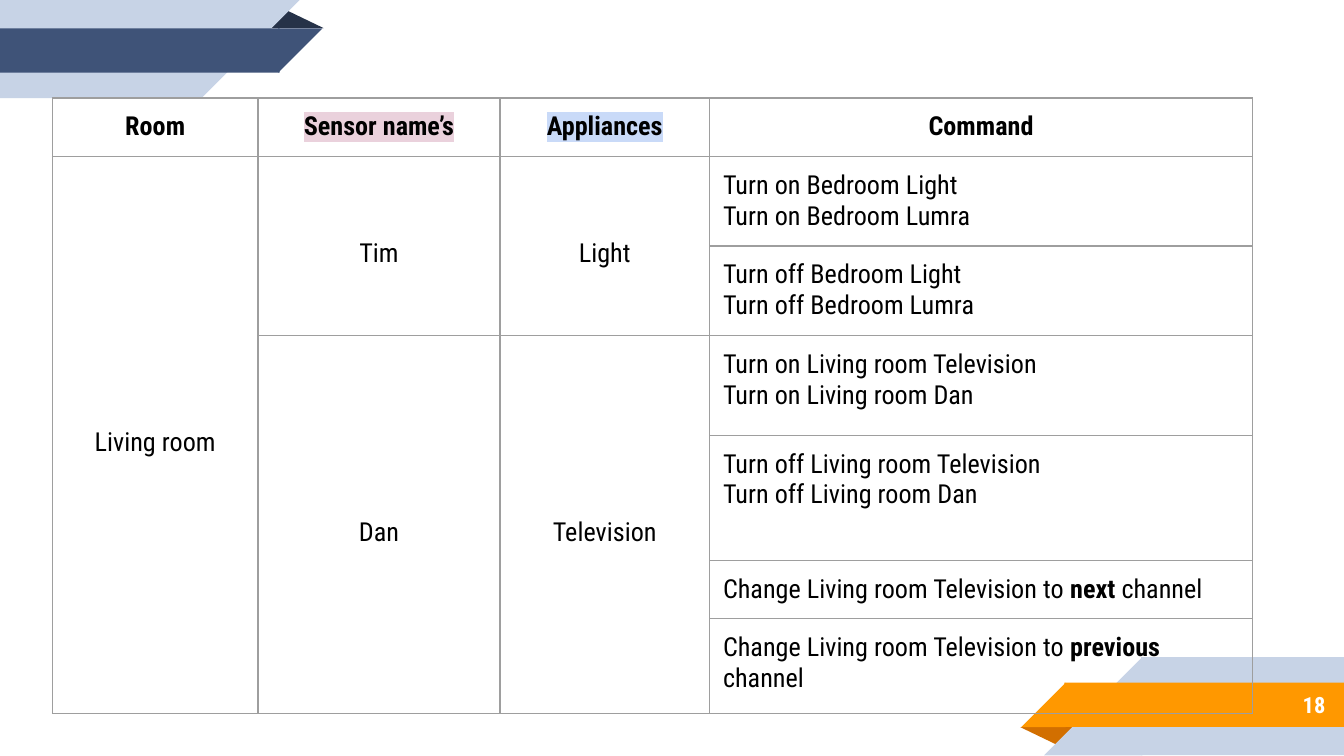
from collections import namedtuple

from lxml import etree
from pptx import Presentation
from pptx import util as u
from pptx.dml.color import RGBColor
from pptx.enum import shapes, text
from pptx.oxml import ns

Box = namedtuple("Box", "left top width height")

WHITE = RGBColor(0xFF, 0xFF, 0xFF)
BLACK = RGBColor(0x00, 0x00, 0x00)
PALE = RGBColor(0xC7, 0xD3, 0xE6)
NAVY = RGBColor(0x3F, 0x53, 0x78)
DARK_NAVY = RGBColor(0x26, 0x32, 0x48)
ORANGE = RGBColor(0xFF, 0x98, 0x00)
DARK_ORANGE = RGBColor(0xD2, 0x6F, 0x00)
PINK = RGBColor(0xEA, 0xD1, 0xDC)
SKY = RGBColor(0xC9, 0xDA, 0xF8)
GREY = RGBColor(0x9E, 0x9E, 0x9E)

FONT = "Roboto Condensed"
BODY = {"name": FONT, "size": u.Pt(14), "bold": False}
STRONG = {**BODY, "bold": True}
NUMBER = {"name": FONT, "size": u.Pt(12), "bold": True}
CENTRED = {"alignment": text.PP_ALIGN.CENTER}
SPACED = {**CENTRED, "line_spacing": 1.5}
MARGINS = {f"margin_{side}": u.Inches(0.1)
           for side in ("left", "right", "top", "bottom")}

COLUMNS = [1.53, 1.8, 1.56, 4.04]
ROWS = [0.38, 0.59, 0.59, 0.74, 0.93, 0.38, 0.71]
HEADINGS = [("Room", None), ("Sensor name’s", PINK),
            ("Appliances", SKY), ("Command", None)]
GROUPS = [(1, 0, 6, "Living room"),
          (1, 1, 2, "Tim"), (1, 2, 2, "Light"),
          (3, 1, 4, "Dan"), (3, 2, 4, "Television")]
COMMANDS = [
    [["Turn on Bedroom Light"], ["Turn on Bedroom Lumra"]],
    [["Turn off Bedroom Light"], ["Turn off Bedroom Lumra"]],
    [["Turn on Living room Television"], ["Turn on Living room Dan"]],
    [["Turn off Living room Television"], ["Turn off Living room Dan"]],
    [["Change Living room Television to ", "next", " channel"]],
    [["Change Living room Television to", " previous", " channel"]],
]


def apply(target, values):
    for name, value in values.items():
        setattr(target, name, value)


def add_span(para, words, style, color=BLACK, highlight=None):
    span = para.add_run()
    span.text = words
    apply(span.font, style)
    span.font.color.rgb = color
    if highlight is not None:
        mark = etree.Element(ns.qn("a:highlight"))
        etree.SubElement(mark, ns.qn("a:srgbClr"), val=str(highlight))
        span.font.fill._xPr.find(ns.qn("a:solidFill")).addnext(mark)


def add_ribbon(page, box, stripe_color, fold_color, turned):
    kinds = shapes.MSO_SHAPE
    parts = [
        (kinds.ISOSCELES_TRIANGLE, Box(1.98, 0.07, 0.43, 0.14), fold_color),
        (kinds.RECTANGLE, Box(0, 0, 1.51, 0.73), PALE),
        (kinds.RIGHT_TRIANGLE, Box(1.5, 0, 0.73, 0.73), PALE),
        (kinds.RECTANGLE, Box(0, 0.21, 2.08, 0.33), stripe_color),
        (kinds.RIGHT_TRIANGLE, Box(2.07, 0.21, 0.33, 0.33), stripe_color),
    ]
    for kind, part, color in parts:
        left, top = part.left, part.top
        if turned:
            left = box.width - left - part.width
            top = box.height - top - part.height
        shape = page.shapes.add_shape(
            kind, u.Inches(box.left + left), u.Inches(box.top + top),
            u.Inches(part.width), u.Inches(part.height))
        shape.shadow.inherit = False
        shape.fill.solid()
        shape.fill.fore_color.rgb = color
        shape.line.fill.background()
        if kind == kinds.ISOSCELES_TRIANGLE:
            shape.adjustments[0] = 0.324
            shape.rotation = 180 if turned else 0
        else:
            shape.rotation = 0 if turned else 180
            shape._element.spPr.find(ns.qn("a:xfrm")).set("flipH", "1")


def add_number(page, box, words):
    frame = page.shapes.add_textbox(*map(u.Inches, box)).text_frame
    apply(frame, {**MARGINS, "word_wrap": True,
                  "vertical_anchor": text.MSO_ANCHOR.MIDDLE})
    para = frame.paragraphs[0]
    para.alignment = text.PP_ALIGN.RIGHT
    add_span(para, words, NUMBER, WHITE)


def format_cell(cell):
    apply(cell, MARGINS)
    cell.fill.background()
    properties = cell._tc.get_or_add_tcPr()
    for position, side in enumerate(("lnL", "lnR", "lnT", "lnB")):
        border = etree.Element(ns.qn(f"a:{side}"), w=str(u.Pt(0.75)))
        fill = etree.SubElement(border, ns.qn("a:solidFill"))
        etree.SubElement(fill, ns.qn("a:srgbClr"), val=str(GREY))
        properties.insert(position, border)


def add_command_table(page, box):
    table = page.shapes.add_table(
        len(ROWS), len(COLUMNS), *map(u.Inches, box)).table
    apply(table, {"first_row": False, "horz_banding": False})
    for column, width in zip(table.columns, COLUMNS):
        column.width = u.Inches(width)
    for row, height in zip(table.rows, ROWS):
        row.height = u.Inches(height)
    for cell in table.iter_cells():
        format_cell(cell)

    for column, (words, highlight) in enumerate(HEADINGS):
        para = table.cell(0, column).text_frame.paragraphs[0]
        apply(para, CENTRED)
        add_span(para, words, STRONG, highlight=highlight)

    for row, column, count, words in GROUPS:
        cell = table.cell(row, column)
        cell.merge(table.cell(row + count - 1, column))
        cell.vertical_anchor = text.MSO_ANCHOR.MIDDLE
        para = cell.text_frame.paragraphs[0]
        apply(para, SPACED)
        add_span(para, words, BODY)

    for row, lines in enumerate(COMMANDS, start=1):
        frame = table.cell(row, 3).text_frame
        for index, line in enumerate(lines):
            para = frame.add_paragraph() if index else frame.paragraphs[0]
            for place, words in enumerate(line):
                add_span(para, words, STRONG if place == 1 else BODY)


def main():
    deck = Presentation()
    deck.slide_width = u.Inches(10)
    deck.slide_height = deck.slide_width * 9 // 16
    page = deck.slides.add_slide(deck.slide_layouts[6])
    add_ribbon(page, Box(7.6, 4.89, 2.4, 0.73), ORANGE, DARK_ORANGE, True)
    add_ribbon(page, Box(0, 0, 2.4, 0.73), NAVY, DARK_NAVY, False)
    add_number(page, Box(8.33, 5.07, 1.63, 0.35), "18")
    add_command_table(page, Box(0.39, 0.73, sum(COLUMNS), sum(ROWS)))
    deck.save("out.pptx")


if __name__ == "__main__":
    main()
